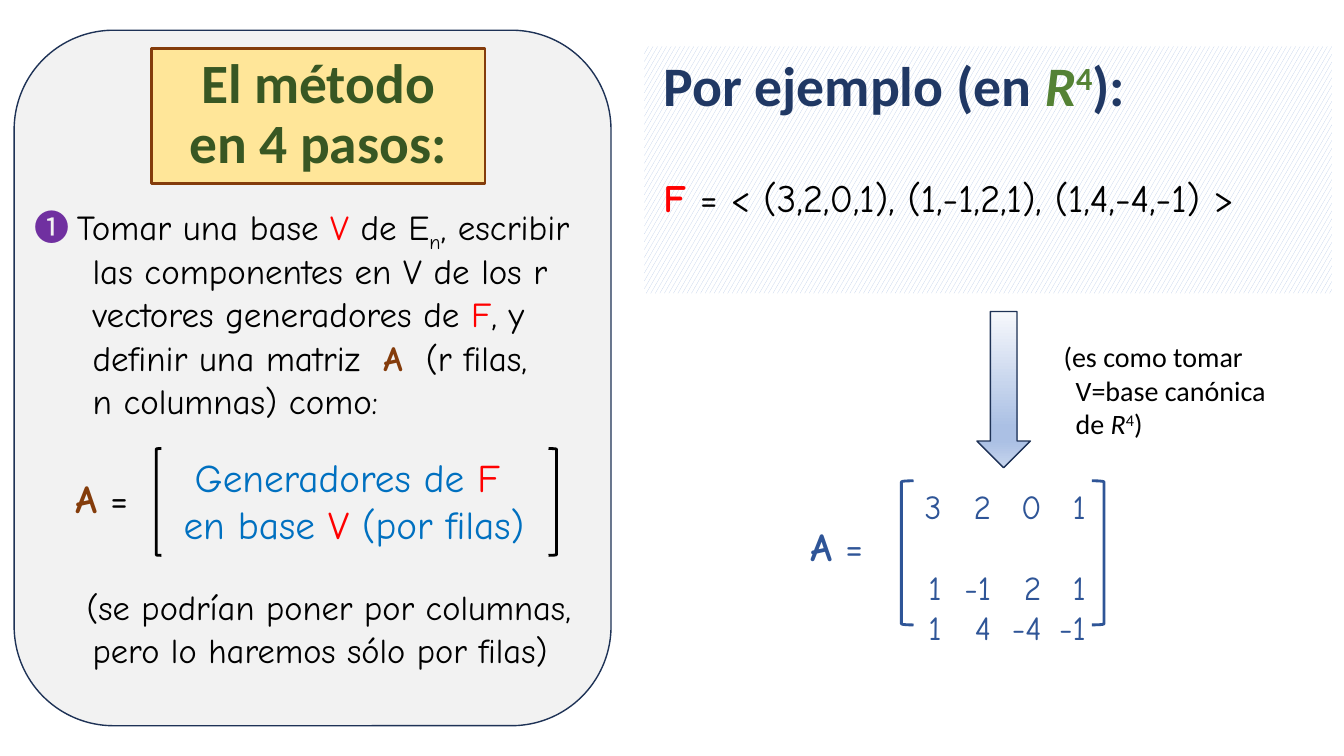
import copy
import pptx
import pptx.util
import pptx.dml.color
import pptx.enum.dml
import pptx.enum.shapes
import pptx.enum.text
import pptx.oxml
import pptx.oxml.ns

PX = 9144  # 100 px to the inch
SHAPE = pptx.enum.shapes.MSO_SHAPE
ALIGN = pptx.enum.text.PP_ALIGN
ANCHOR = pptx.enum.text.MSO_ANCHOR

HAND, SANS, DINGBAT = "Comic Neue", "Calibri", "Noto Sans CJK JP"
BLACK, RED, BROWN, BLUE = "000000", "FF0000", "843C0B", "2F5597"
SKY, NAVY, OUTLINE = "0070C0", "203864", "1E3256"


def px(n):
    return pptx.util.Emu(n * PX)


def rgb(value):
    return pptx.dml.color.RGBColor.from_string(value)


def add_shape(s, kind, box, fill=None, line=None, width=1):
    sp = s.shapes.add_shape(kind, *map(px, box))
    sp.shadow.inherit = False
    if fill:
        sp.fill.solid()
        sp.fill.fore_color.rgb = rgb(fill)
    else:
        sp.fill.background()
    if line:
        sp.line.color.rgb = rgb(line)
        sp.line.width = pptx.util.Pt(width)
    else:
        sp.line.fill.background()
    return sp


def add_run(p, text, size=25, font=HAND, color=BLACK, bold=False, italic=False, base=0):
    r = p.add_run()
    r.text = text
    r.font.size = pptx.util.Pt(size)
    r.font.name = font
    r.font.bold, r.font.italic = bold, italic
    r.font.color.rgb = rgb(color)
    rPr = r.font._element
    if base:
        rPr.set("baseline", str(base * 1000))
    for tag in ("a:ea", "a:sym"):
        if font == DINGBAT:
            etc = pptx.oxml.parse_xml(f'<{tag} {pptx.oxml.ns.nsdecls("a")} typeface="{font}"/>')
            rPr.append(etc)


def write(sp, lines, align=ALIGN.LEFT, anchor=ANCHOR.TOP, spacing=1.0, before=0,
          indents=(), wrap=True, **base):
    """Each line is a list of (text, changes to the base format)."""
    tf = sp.text_frame
    tf.word_wrap = wrap
    tf.vertical_anchor = anchor
    for i, line in enumerate(lines):
        p = tf.paragraphs[0] if i == 0 else tf.add_paragraph()
        p.alignment = align
        p.line_spacing = spacing
        p.space_before = pptx.util.Pt(before)
        if indents:
            p._p.get_or_add_pPr().set("marL", str(px(indents[min(i, len(indents) - 1)])))
        for text, changes in line:
            add_run(p, text, **{**base, **changes})
    return tf


def add_text(s, box, lines, **fmt):
    return write(s.shapes.add_textbox(*map(px, box)), lines, **fmt)


def add_brackets(s, left, right, top, height, color):
    for kind, (x, w) in ((SHAPE.LEFT_BRACKET, left), (SHAPE.RIGHT_BRACKET, right)):
        add_shape(s, kind, (x, top, w, height), line=color, width=2)


def add_matrix(s, box, rows, stops, color):
    tf = add_text(s, box, [[("".join("\t" + n for n in row), {})] for row in rows],
                  size=24, color=color)
    tf.margin_left = 0
    tabs = "".join(f'<a:tab pos="{px(x)}" algn="r"/>' for x in stops)
    for p in tf.paragraphs:
        p._p.get_or_add_pPr().append(pptx.oxml.parse_xml(
            f'<a:tabLst {pptx.oxml.ns.nsdecls("a")}>{tabs}</a:tabLst>'))
    tf.paragraphs[1].space_before = pptx.util.Pt(29)


def add_gradient_arrow(s, box, stops):
    sp = add_shape(s, SHAPE.DOWN_ARROW, box, line=OUTLINE)
    sp.fill.gradient()
    sp.fill.gradient_angle = 270
    gs_list = next(sp._element.iter(pptx.oxml.ns.qn("a:gsLst")))
    while len(gs_list) < len(stops):
        gs_list.append(copy.deepcopy(gs_list[0]))
    for stop, (pos, color) in zip(sp.fill.gradient_stops, stops):
        stop.position = pos
        stop.color.rgb = rgb(color)


def add_method(s):
    # Card and title
    add_shape(s, SHAPE.ROUNDED_RECTANGLE, (14, 30, 592, 690), "F2F2F2", OUTLINE)
    title = add_shape(s, SHAPE.RECTANGLE, (150, 48, 331, 134), "FFE699", BROWN, 2)
    write(title, [[("El método", {})], [("en 4 pasos:", {})]], align=ALIGN.CENTER,
          anchor=ANCHOR.MIDDLE, spacing=0.9, size=39.6, font=SANS, color="385723", bold=True)

    # Step 1
    red = {"color": RED}
    add_text(s, (24, 207, 599, 230), [
        [("➊ ", {"font": DINGBAT, "color": "7030A0"}), ("Tomar una base ", {}), ("V", red),
         (" de E", {}), ("n", {"base": -25}), (", escribir", {})],
        [("las componentes en V de los r", {})],
        [("vectores generadores de ", {}), ("F", red), (", y", {})],
        [("definir una matriz  ", {}), ("A", {"color": BROWN, "bold": True}),
         ("  (r filas,", {})],
        [("n columnas) como:", {})],
    ], spacing=0.7, before=10, indents=(0, 58))

    # Generator matrix
    add_brackets(s, (155, 5), (544, 8), 445, 106, BLACK)
    add_text(s, (155, 445, 392, 104), [
        [("Generadores de ", {}), ("F ", red)],
        [("en base ", {}), ("V", red), (" (por filas)", {})],
    ], align=ALIGN.CENTER, size=28, color=SKY)
    add_text(s, (65, 466, 92, 57), [[("A", {"color": BROWN, "bold": True}), (" =", {})]],
             size=28, wrap=False)

    # Remark
    add_text(s, (13, 588, 669, 100), [[("(se podrían poner por columnas,", {})],
                                      [("pero lo haremos sólo por filas)", {})]],
             spacing=0.7, before=10, indents=(63, 69), size=24.6)


def add_example(s):
    # Hatched panel
    panel = add_shape(s, SHAPE.RECTANGLE, (639, 46, 682, 245))
    panel.fill.patterned()
    panel.fill.pattern = pptx.enum.dml.MSO_PATTERN.LARGE_CONFETTI
    panel.fill.fore_color.rgb = rgb("B4C7E7")
    panel.fill.back_color.rgb = rgb("FFFFFF")
    green = {"color": "548235"}
    head = {"size": 39.8, "font": SANS, "color": NAVY, "bold": True}
    tf = write(panel, [
        [("Por ejemplo (en ", head), ("R", {**head, **green, "italic": True}),
         ("4", {**head, **green, "base": 30}), ("):", head)],
        [("F ", {"color": RED, "bold": True}), ("= < (3,2,0,1), (1,-1,2,1), (1,4,-4,-1) >", {})],
    ], spacing=0.7, size=27.7)
    tf.margin_left, tf.margin_top = px(19), px(23)
    tf.paragraphs[1].space_before = pptx.util.Pt(50)

    # Arrow and note
    add_gradient_arrow(s, (969, 309, 53, 155),
                       [(0, "F6F8FC"), (0.74, "ABC0E4"), (0.83, "ABC0E4"), (1, "C7D5ED")])
    add_text(s, (1045, 332, 223, 111), [
        [("(es como tomar", {})],
        [("V=base canónica", {})],
        [("de ", {}), ("R", {"italic": True}), ("4", {"base": 30}), (")", {})],
    ], indents=(0, 12), wrap=False, size=20, font=SANS)

    # Numeric matrix
    add_text(s, (794, 513, 92, 57), [[("A", {"bold": True}), (" =", {})]],
             size=28, color=BLUE, wrap=False)
    add_brackets(s, (894, 12), (1083, 12), 477, 143, BLUE)
    add_matrix(s, (900, 477, 222, 170),
               [("3", "2", "0", "1"), ("1", "-1", "2", "1"), ("1", "4", "-4", "-1")],
               (34, 83, 133, 177), BLUE)


def main():
    prs = pptx.Presentation()
    prs.slide_width, prs.slide_height = px(1333), px(750)
    s = prs.slides.add_slide(prs.slide_layouts[6])
    add_method(s)
    add_example(s)
    prs.save("out.pptx")


if __name__ == "__main__":
    main()
